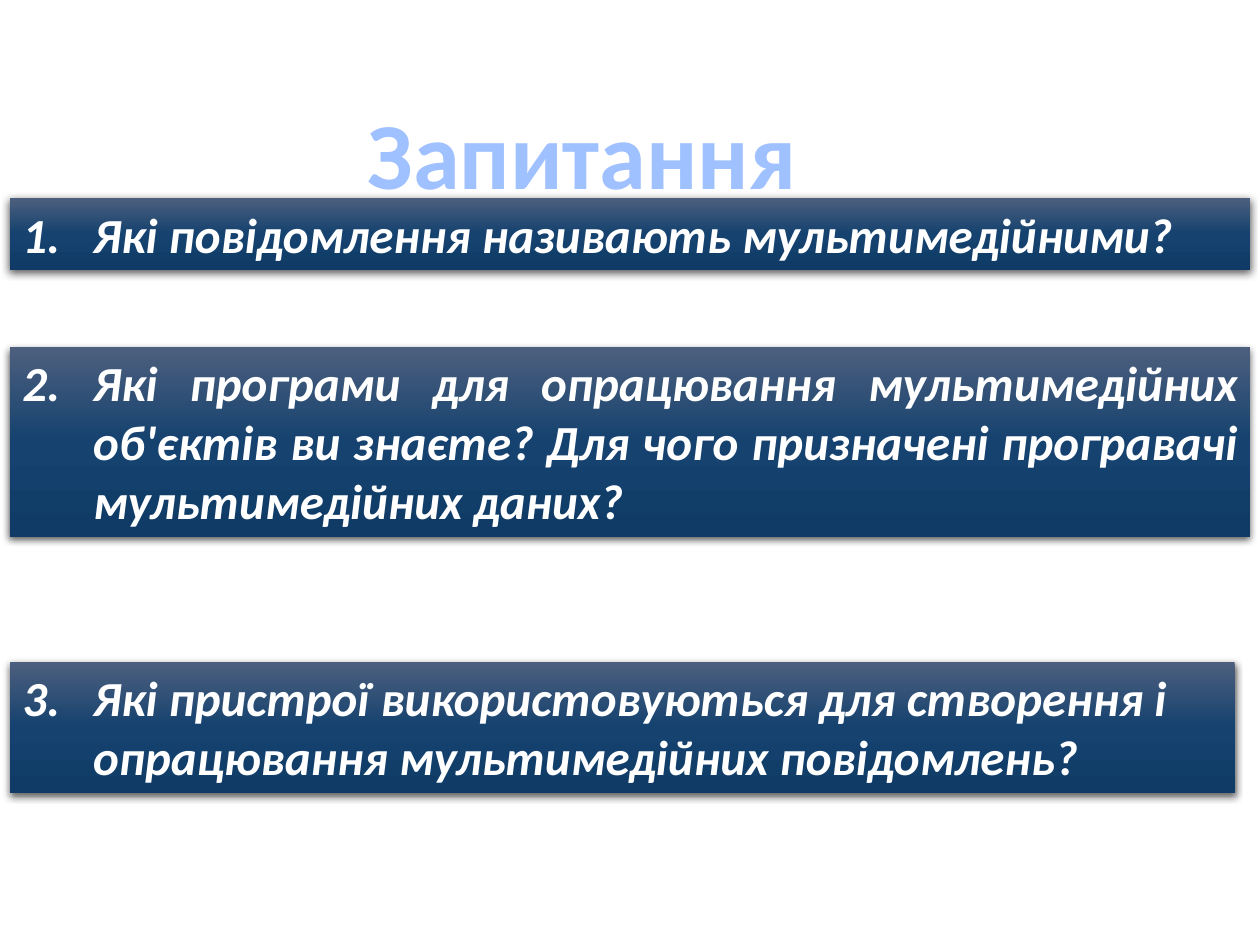
from dataclasses import dataclass

from lxml import etree
from pptx import Presentation, util as u
from pptx.dml.color import RGBColor
from pptx.enum import shapes, text
from pptx.oxml.ns import qn

WHITE = RGBColor(0xFF, 0xFF, 0xFF)
TITLE_BLUE = RGBColor(0xA0, 0xC1, 0xFF)
BAR_STOPS = (
    (0, RGBColor(0x4D, 0x5F, 0x7E)),
    (50, RGBColor(0x15, 0x42, 0x6F)),
    (100, RGBColor(0x0F, 0x3B, 0x66)),
)
BAR_LEFT = u.Cm(0.2)
INDENT = u.Cm(1.43)
QUESTION_FORMAT = {"name": "Calibri", "size": u.Pt(28), "bold": True, "italic": True}
TITLE_FORMAT = {"name": "Calibri", "size": u.Pt(54), "bold": True}


@dataclass
class Question:
    wording: str
    top: float
    width: float
    height: float
    align: text.PP_ALIGN


QUESTIONS = (
    Question("Які повідомлення називають мультимедійними?",
             3.99, 25, 1.45, text.PP_ALIGN.JUSTIFY),
    Question("Які програми для опрацювання мультимедійних об'єктів ви знаєте? "
             "Для чого призначені програвачі мультимедійних даних?",
             6.99, 25, 3.84, text.PP_ALIGN.JUSTIFY),
    Question("Які пристрої використовуються для створення і "
             "опрацювання мультимедійних повідомлень?",
             13.34, 24.69, 2.64, text.PP_ALIGN.LEFT),
)


def add_child(parent, tag: str, **attributes):
    values = {name: str(value) for name, value in attributes.items()}
    return etree.SubElement(parent, qn(tag), values)


def format_font(font, values: dict, color: RGBColor) -> None:
    for name, value in values.items():
        setattr(font, name, value)
    font.color.rgb = color


def style_bar(box) -> None:
    """Give a bar its vertical gradient and soft shadow."""
    box.line.fill.background()
    box.fill.gradient()
    box.fill.gradient_angle = 270
    properties = box._element.spPr
    stops = properties.find(qn("a:gradFill")).find(qn("a:gsLst"))
    for stop in list(stops):
        stops.remove(stop)
    for percent, color in BAR_STOPS:
        stop = add_child(stops, "a:gs", pos=percent * 1000)
        add_child(stop, "a:srgbClr", val=color)

    box.shadow.inherit = False
    shadow = add_child(properties.find(qn("a:effectLst")), "a:outerShdw",
                       blurRad=u.Pt(4.5), dist=u.Pt(1.5), dir=5400000, rotWithShape=0)
    shade = add_child(shadow, "a:srgbClr", val="000000")
    add_child(shade, "a:alpha", val=63000)


def add_question(page, number: int, question: Question) -> None:
    box = page.shapes.add_shape(
        shapes.MSO_SHAPE.RECTANGLE, BAR_LEFT, u.Cm(question.top),
        u.Cm(question.width), u.Cm(question.height))
    style_bar(box)
    frame = box.text_frame
    frame.word_wrap = True
    frame.vertical_anchor = text.MSO_ANCHOR.TOP
    para = frame.paragraphs[0]
    para.alignment = question.align

    # Automatic number with a hanging indent
    settings = para._p.get_or_add_pPr()
    settings.set("marL", str(INDENT))
    settings.set("indent", str(-INDENT))
    add_child(settings, "a:buFont", typeface="+mj-lt")
    add_child(settings, "a:buAutoNum", type="arabicPeriod", startAt=number)

    span = para.add_run()
    span.text = question.wording
    format_font(span.font, QUESTION_FORMAT, WHITE)


def add_title(page, wording: str) -> None:
    box = page.shapes.add_textbox(u.Cm(7.11), u.Cm(1.8), u.Cm(9.25), u.Cm(2.57))
    box.text_frame.word_wrap = False
    para = box.text_frame.paragraphs[0]
    para.alignment = text.PP_ALIGN.CENTER
    span = para.add_run()
    span.text = wording
    format_font(span.font, TITLE_FORMAT, TITLE_BLUE)


def main() -> None:
    deck = Presentation()
    deck.slide_width, deck.slide_height = u.Cm(25.4), u.Cm(19.05)
    page = deck.slides.add_slide(deck.slide_layouts[6])

    # Numbered question bars
    for number, question in enumerate(QUESTIONS, start=1):
        add_question(page, number, question)

    # Heading, in front of the bars
    add_title(page, "Запитання")
    deck.save("out.pptx")


if __name__ == "__main__":
    main()
